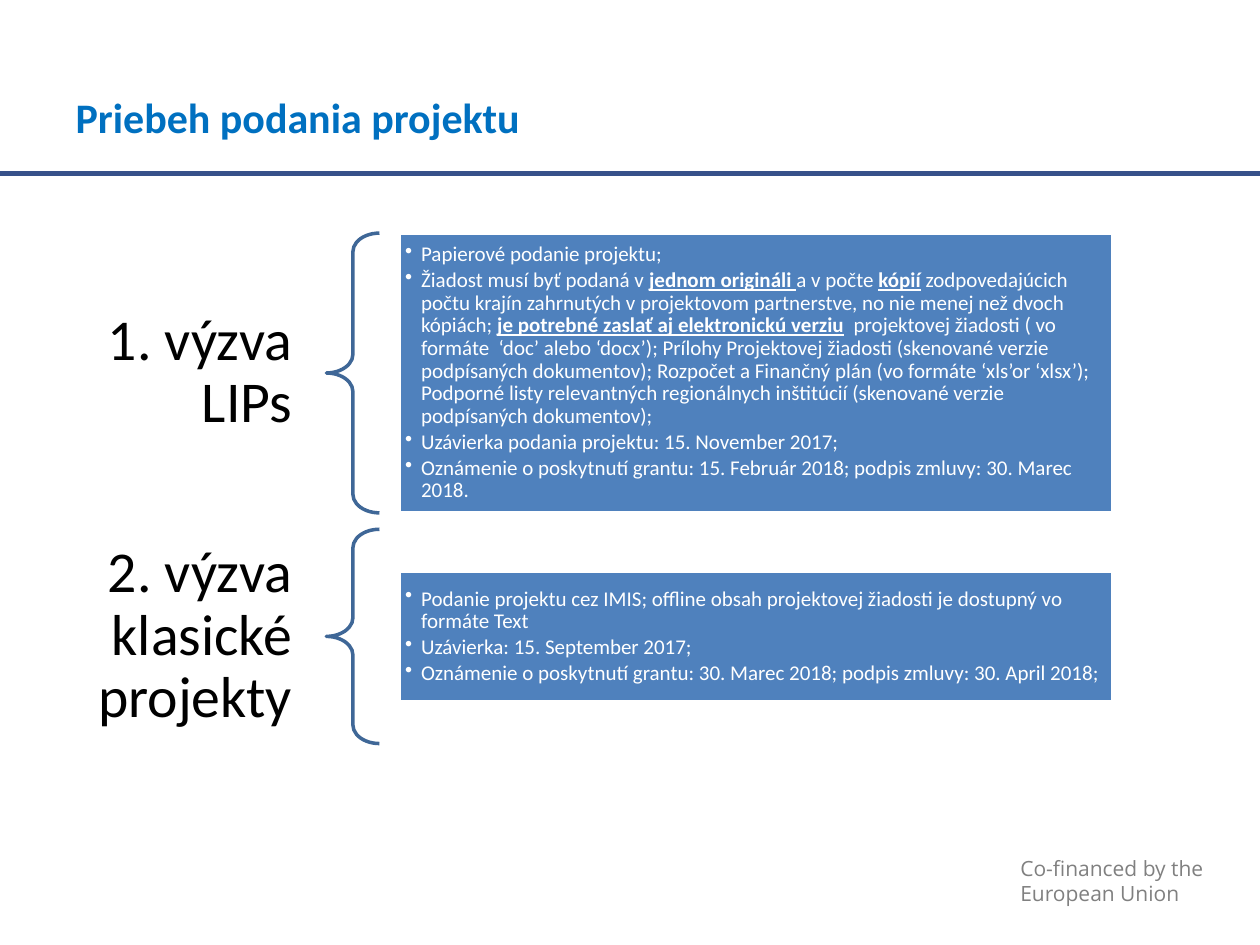
import pptx
import pptx.util
import pptx.dml.color
import pptx.enum.shapes
import pptx.enum.text
import pptx.oxml.ns
from lxml import etree

Cm = pptx.util.Cm
Pt = pptx.util.Pt
RGBColor = pptx.dml.color.RGBColor
SHAPE = pptx.enum.shapes.MSO_SHAPE
ALIGN = pptx.enum.text.PP_ALIGN
MIDDLE = pptx.enum.text.MSO_ANCHOR.MIDDLE

TITLE_BLUE = RGBColor(0x00, 0x70, 0xC0)
RULE_BLUE = RGBColor(0x37, 0x51, 0x8A)
BRACE_BLUE = RGBColor(0x3F, 0x67, 0x97)
PANEL_BLUE = RGBColor(0x4F, 0x81, 0xBD)
GREY = RGBColor(0x80, 0x80, 0x80)
WHITE = RGBColor(0xFF, 0xFF, 0xFF)
BLACK = RGBColor(0x00, 0x00, 0x00)

# Each bullet is a list of runs; every second run is emphasised.
FIRST_CALL = [
    ["Papierové podanie projektu;"],
    ["Žiadost musí byť podaná v ", "jednom origináli ", "a v počte ", "kópií",
     " zodpovedajúcich počtu krajín zahrnutých v projektovom partnerstve, "
     "no nie menej než dvoch kópiách; ",
     "je potrebné zaslať aj elektronickú verziu",
     "  projektovej žiadosti ( vo formáte  ‘doc’ alebo ‘docx’); "
     "Prílohy Projektovej žiadosti (skenované verzie podpísaných dokumentov); "
     "Rozpočet a Finančný plán (vo formáte ‘xls’or ‘xlsx’); "
     "Podporné listy relevantných regionálnych inštitúcií "
     "(skenované verzie podpísaných dokumentov);"],
    ["Uzávierka podania projektu: 15. November 2017;"],
    ["Oznámenie o poskytnutí grantu: 15. Február 2018; "
     "podpis zmluvy: 30. Marec 2018."],
]
SECOND_CALL = [
    ["Podanie projektu cez IMIS; offline obsah projektovej žiadosti "
     "je dostupný vo formáte Text"],
    ["Uzávierka: 15. September 2017;"],
    ["Oznámenie o poskytnutí grantu: 30. Marec 2018; "
     "podpis zmluvy: 30. April 2018;"],
]


def style_font(font, size, color, name="Calibri"):
    font.size = Pt(size)
    font.name = name
    font.color.rgb = color


def set_insets(frame, horizontal, vertical):
    frame.margin_left = frame.margin_right = Cm(horizontal)
    frame.margin_top = frame.margin_bottom = Cm(vertical)


def add_title(slide, text):
    title = slide.shapes.title
    title.left, title.top = Cm(1.27), Cm(0.76)
    title.width, title.height = Cm(18.03), Cm(3.18)
    frame = title.text_frame
    frame.text = text
    frame.vertical_anchor = MIDDLE
    heading = frame.paragraphs[0]
    heading.alignment = ALIGN.LEFT
    style_font(heading.font, 24, TITLE_BLUE)
    heading.font.bold = True


def add_rule(slide, y, width):
    rule = slide.shapes.add_connector(
        pptx.enum.shapes.MSO_CONNECTOR.STRAIGHT, 0, y, width, y)
    rule.line.color.rgb = RULE_BLUE
    rule.line.width = Pt(3)
    etree.SubElement(rule.element.spPr, pptx.oxml.ns.qn("a:effectLst"))


def add_footer(slide, lines):
    footer = slide.shapes.add_textbox(Cm(20.32), Cm(17.12), Cm(4.37), Cm(1.27))
    frame = footer.text_frame
    frame.word_wrap = True
    frame.text = "\n".join(lines)
    for paragraph in frame.paragraphs:
        style_font(paragraph.font, 12, GREY, "Open Sans")


def add_label(slide, text, middle, height):
    label = slide.shapes.add_textbox(
        Cm(1.27), Cm(middle - height / 2), Cm(5.28), Cm(height))
    frame = label.text_frame
    frame.word_wrap = True
    frame.vertical_anchor = MIDDLE
    set_insets(frame, 0.66, 0.23)
    frame.text = text
    paragraph = frame.paragraphs[0]
    paragraph.alignment = ALIGN.RIGHT
    paragraph.line_spacing = 0.9
    style_font(paragraph.font, 33, BLACK)


def add_brace(slide, middle, height):
    brace = slide.shapes.add_shape(
        SHAPE.LEFT_BRACE, Cm(6.58), Cm(middle - height / 2), Cm(1.07), Cm(height))
    brace.shadow.inherit = False
    brace.adjustments[0] = 0.35
    brace.adjustments[1] = 0.5
    brace.fill.background()
    brace.line.color.rgb = BRACE_BLUE
    brace.line.width = Pt(2)


def format_bullet(paragraph):
    properties = paragraph._p.get_or_add_pPr()
    properties.set("marL", str(Cm(0.32)))
    properties.set("indent", str(-Cm(0.32)))
    bullet = etree.SubElement(properties, pptx.oxml.ns.qn("a:buChar"))
    bullet.set("char", "•")
    paragraph.alignment = ALIGN.LEFT
    paragraph.line_spacing = 0.9
    paragraph.space_after = Pt(1.8)
    style_font(paragraph.font, 12, WHITE)


def add_panel(slide, bullets, middle, height):
    panel = slide.shapes.add_shape(
        SHAPE.RECTANGLE, Cm(8.05), Cm(middle - height / 2), Cm(14.38), Cm(height))
    panel.shadow.inherit = False
    panel.fill.solid()
    panel.fill.fore_color.rgb = PANEL_BLUE
    panel.line.color.rgb = WHITE
    panel.line.width = Pt(2)
    frame = panel.text_frame
    frame.word_wrap = True
    frame.vertical_anchor = MIDDLE
    set_insets(frame, 0.12, 0.12)
    for index, pieces in enumerate(bullets):
        paragraph = frame.add_paragraph() if index else frame.paragraphs[0]
        format_bullet(paragraph)
        for position, piece in enumerate(pieces):
            run = paragraph.add_run()
            run.text = piece
            if position % 2:
                run.font.bold = run.font.underline = True


def add_call(slide, label, bullets, middle, label_height, brace_height, panel_height):
    """Add one row: label, brace and bullet panel centred on the same height."""
    add_label(slide, label, middle, label_height)
    add_brace(slide, middle, brace_height)
    add_panel(slide, bullets, middle, panel_height)


def main():
    deck = pptx.Presentation()
    deck.slide_width, deck.slide_height = Cm(25.4), Cm(19.05)
    slide = deck.slides.add_slide(deck.slide_layouts[5])
    add_rule(slide, Cm(3.5), deck.slide_width)
    add_footer(slide, ["Co-financed by the", "European Union"])
    add_title(slide, "Priebeh podania projektu")
    add_call(slide, "1. výzva  LIPs", FIRST_CALL, 7.52, 3.07, 5.64, 5.64)
    add_call(slide, "2. výzva  klasické projekty", SECOND_CALL, 12.83, 4.32, 4.32, 2.64)
    deck.save("out.pptx")


if __name__ == "__main__":
    main()
